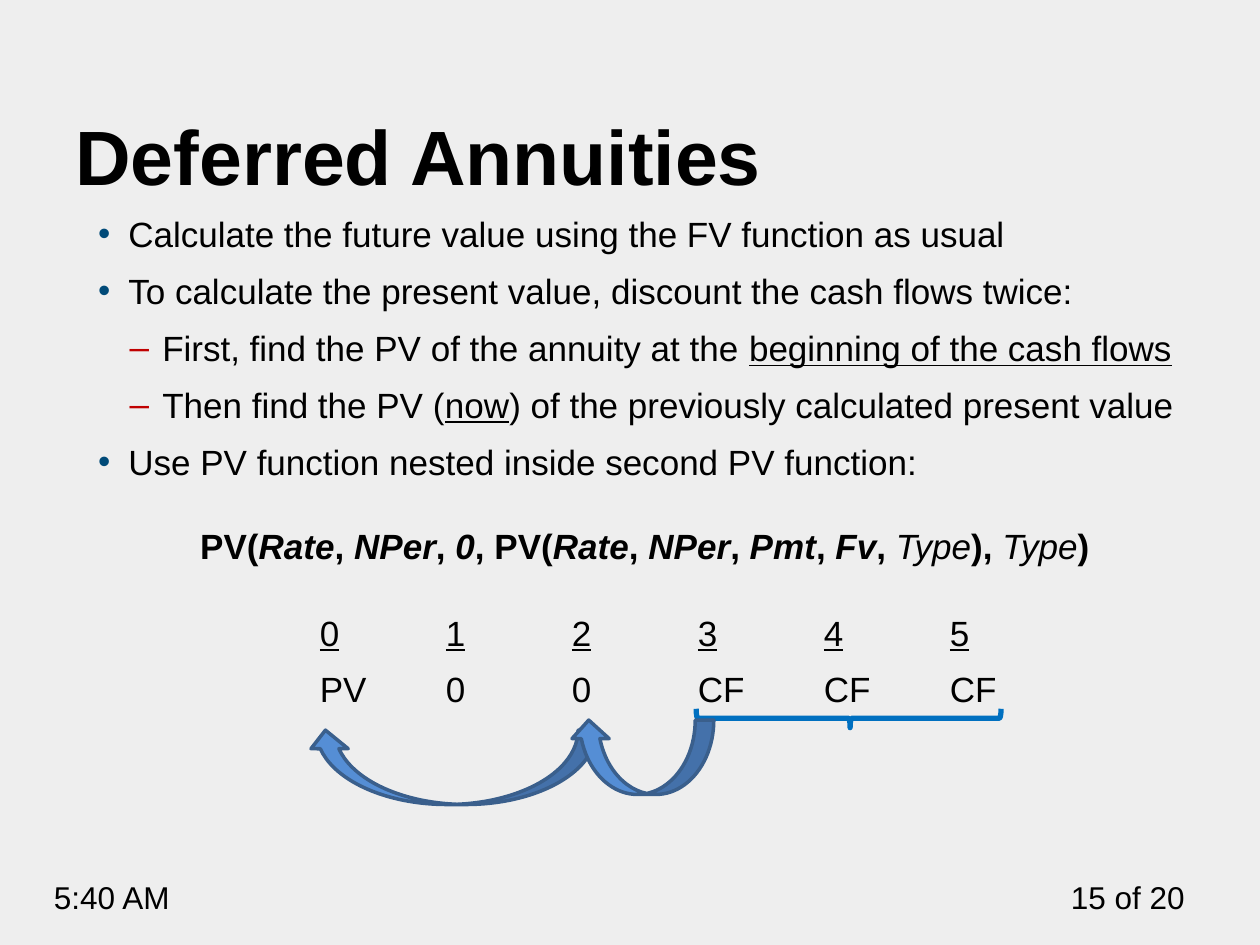
import dataclasses

import pptx
import pptx.dml.color
import pptx.enum.shapes
import pptx.enum.text
import pptx.oxml.ns
import pptx.util
from lxml import etree
from pptx.util import Inches

ALIGN = pptx.enum.text.PP_ALIGN
ANCHOR = pptx.enum.text.MSO_ANCHOR
SHAPE = pptx.enum.shapes.MSO_SHAPE


@dataclasses.dataclass(frozen=True)
class Theme:
    font: str = "Arial"
    background: str = "EEEEEE"
    text: str = "000000"
    bullet: str = "004A78"
    dash: str = "C00000"
    brace: str = "0070C0"
    arrow_fill: str = "558ED5"
    arrow_line: str = "3A5F8C"
    title_size: float = 44
    body_size: float = 20
    footer_size: float = 18
    gap: float = 8.5


THEME = Theme()
# Bullet levels: character, colour, left margin, hanging indent
LEVELS = [("•", THEME.bullet, 0.24, 0.24), ("–", THEME.dash, 0.51, 0.26)]


def rgb(value):
    return pptx.dml.color.RGBColor.from_string(value)


def add_element(parent, tag, **attributes):
    return etree.SubElement(parent, pptx.oxml.ns.qn(tag), attributes)


def set_bullet(paragraph, level):
    mark, color, margin, hanging = LEVELS[level]
    properties = paragraph._p.get_or_add_pPr()
    properties.set("marL", str(Inches(margin)))
    properties.set("indent", str(-Inches(hanging)))
    add_element(add_element(properties, "a:buClr"), "a:srgbClr", val=color)
    add_element(properties, "a:buFont", typeface=THEME.font)
    add_element(properties, "a:buChar", char=mark)
    paragraph.level = level


def set_tabs(paragraph, stops):
    tab_list = add_element(paragraph._p.get_or_add_pPr(), "a:tabLst")
    for stop in stops:
        add_element(tab_list, "a:tab", pos=str(Inches(stop)), algn="l")


def add_text(slide, box, paragraphs, size=THEME.body_size, align=ALIGN.LEFT,
             anchor=ANCHOR.TOP, levels=None, tabs=()):
    """Each paragraph is a list of (text, style); style letters are b, i and u."""
    frame = slide.shapes.add_textbox(*map(Inches, box)).text_frame
    frame.word_wrap = True
    frame.vertical_anchor = anchor
    for index, runs in enumerate(paragraphs):
        paragraph = frame.paragraphs[0] if index == 0 else frame.add_paragraph()
        if levels:
            set_bullet(paragraph, levels[index])
        if tabs:
            set_tabs(paragraph, tabs)
        paragraph.alignment = align
        if index:
            paragraph.space_before = pptx.util.Pt(THEME.gap)
        for text, style in runs:
            run = paragraph.add_run()
            run.text = text
            run.font.name = THEME.font
            run.font.size = pptx.util.Pt(size)
            run.font.color.rgb = rgb(THEME.text)
            run.font.bold = "b" in style
            run.font.italic = "i" in style
            run.font.underline = "u" in style


def add_turned_shape(slide, kind, box, line, width, fill=None):
    shape = slide.shapes.add_shape(kind, *map(Inches, box))
    shape.rotation = 90
    shape.shadow.inherit = False
    shape.line.color.rgb = rgb(line)
    shape.line.width = pptx.util.Pt(width)
    if fill:
        shape.fill.solid()
        shape.fill.fore_color.rgb = rgb(fill)
    else:
        shape.fill.background()
    return shape


def add_footer(slide, left, top, width, height):
    add_text(slide, (left, top, 1.58, height), [[("5:40 AM", "")]],
             size=THEME.footer_size)
    number_width = 1.17
    add_text(slide, (left + width - number_width, top, number_width, height),
             [[("15 of 20", "")]], size=THEME.footer_size, align=ALIGN.RIGHT)


def add_steps(slide, box):
    steps = [
        (0, [("Calculate the future value using the FV function as usual", "")]),
        (0, [("To calculate the present value, discount the cash flows twice:", "")]),
        (1, [("First, find the PV of the annuity at the ", ""),
             ("beginning of the cash flows", "u")]),
        (1, [("Then find the PV (", ""), ("now", "u"),
             (") of the previously calculated present value", "")]),
        (0, [("Use PV function nested inside second PV function:", "")]),
    ]
    add_text(slide, box, [runs for _, runs in steps],
             levels=[level for level, _ in steps])


def add_formula(slide, box):
    add_text(slide, box, [[
        ("PV(", "b"), ("Rate", "bi"), (", ", "b"), ("NPer", "bi"), (", ", "b"),
        ("0", "bi"), (", PV(", "b"), ("Rate", "bi"), (", ", "b"),
        ("NPer", "bi"), (", ", "b"), ("Pmt", "bi"), (",", "b"), (" Fv", "bi"),
        (", ", "b"), ("Type", "i"), ("), ", "b"), ("Type", "i"), (")", "b"),
    ]])


def add_timeline(slide, left, top, width, height):
    # Periods and cash flows, one inch apart
    periods = "\t".join(str(period) for period in range(6))
    flows = "\t".join(["PV", "0", "0", "CF", "CF", "CF"])
    add_text(slide, (left, top, width, height),
             [[("\t\t", ""), (periods, "u")], [("\t\t" + flows, "")]],
             tabs=range(1, 8))

    # Brace under the cash flows
    brace = add_turned_shape(slide, SHAPE.RIGHT_BRACE,
                             (left + 6.22, top - 0.31, 0.15, 2.42), THEME.brace, 3)
    brace.adjustments[0] = 0.083
    brace.adjustments[1] = 0.495

    # Discounting arrows: period 2 to 0, then period 3 to 2
    for x, y, span in [(2.85, 0.14, 2.3), (4.36, 0.64, 1.14)]:
        add_turned_shape(slide, SHAPE.CURVED_LEFT_ARROW,
                         (left + x, top + y, 0.59, span),
                         THEME.arrow_line, 2, THEME.arrow_fill)


def main():
    deck = pptx.Presentation()
    deck.slide_width, deck.slide_height = Inches(10), Inches(7.5)
    slide = deck.slides.add_slide(deck.slide_layouts[6])
    slide.background.fill.solid()
    slide.background.fill.fore_color.rgb = rgb(THEME.background)

    add_footer(slide, 0.33, 6.92, 9.17, 0.4)
    add_text(slide, (0.5, 0.39, 9, 1.25), [[("Deferred Annuities", "b")]],
             size=THEME.title_size, anchor=ANCHOR.BOTTOM)
    add_steps(slide, (0.68, 1.64, 9.06, 4.03))
    add_formula(slide, (1.49, 4.11, 8.01, 0.42))
    add_timeline(slide, 0.44, 4.8, 9.06, 1.11)
    deck.save("out.pptx")


if __name__ == "__main__":
    main()
